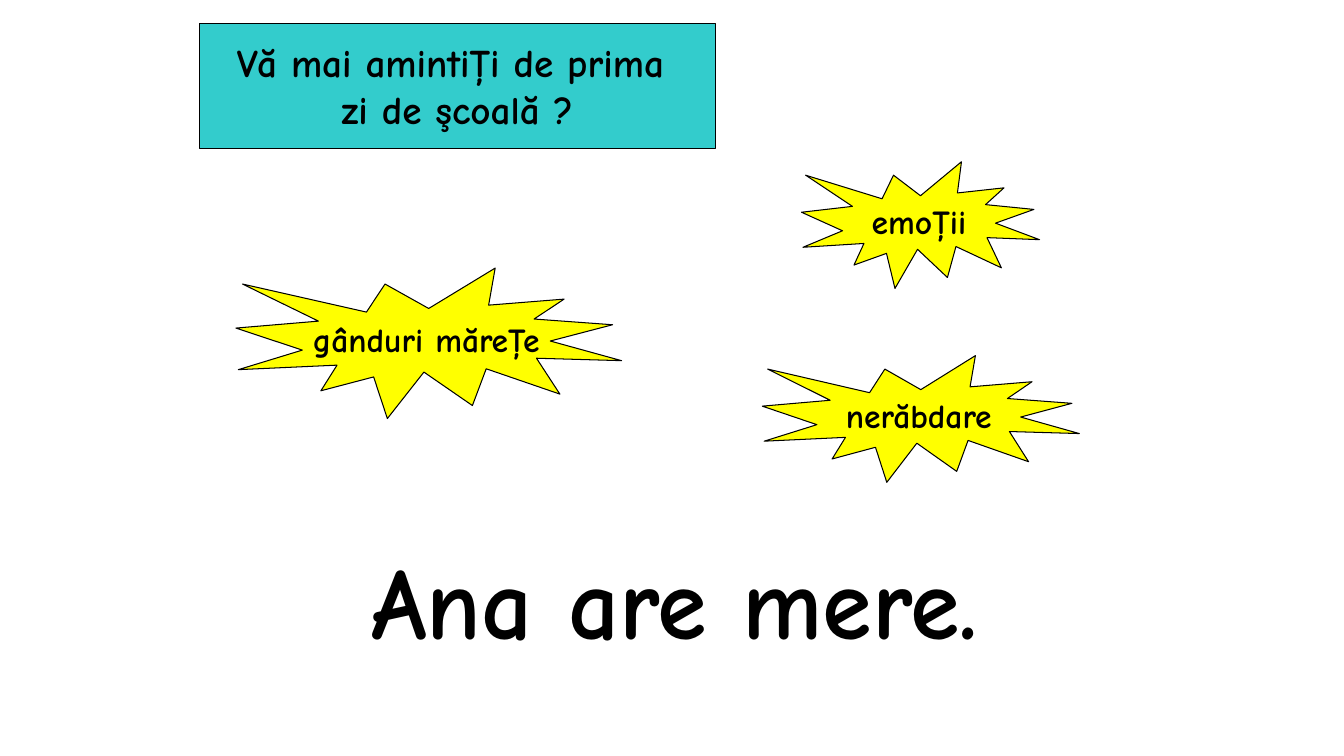
from pptx import Presentation
from pptx.dml.color import RGBColor
from pptx.enum.shapes import MSO_SHAPE
from pptx.enum.text import MSO_ANCHOR, PP_ALIGN
from pptx.util import Pt

FONT = "Comic Neue"
BLACK, WHITE, TEAL, YELLOW = "000000", "FFFFFF", "33CCCC", "FFFF00"


def color(hex_string):
    return RGBColor.from_string(hex_string)


def write_text(shape, text, size, text_color=BLACK, bold=True):
    """Write one centred paragraph per line of text."""
    frame = shape.text_frame
    frame.word_wrap = False
    frame.vertical_anchor = MSO_ANCHOR.MIDDLE
    frame.text = text
    for paragraph in frame.paragraphs:
        paragraph.alignment = PP_ALIGN.CENTER
        for run in paragraph.runs:
            run.font.name = FONT
            run.font.size = Pt(size)
            run.font.bold = bold
            run.font.color.rgb = color(text_color)


def add_panel(slide, box, text, size, fill, kind=MSO_SHAPE.RECTANGLE, outline=BLACK):
    """Add a filled shape with text; box is left, top, width, height in points."""
    shape = slide.shapes.add_shape(kind, *(Pt(length) for length in box))
    shape.shadow.inherit = False
    shape.fill.solid()
    shape.fill.fore_color.rgb = color(fill)
    if outline:
        shape.line.color.rgb = color(outline)
        shape.line.width = Pt(0.75)
    else:
        shape.line.fill.background()
    write_text(shape, text, size)


def add_question(slide, box):
    add_panel(slide, box, "Vă mai amintiţi de prima \nzi de şcoală ?", 28, TEAL)


def add_memory(slide, box, text):
    add_panel(slide, box, text, 24, YELLOW, kind=MSO_SHAPE.EXPLOSION1)


def add_first_sentence(slide, box):
    add_panel(slide, box, "Ana are mere.", 72, WHITE, outline=None)


def main():
    presentation = Presentation()
    presentation.slide_width = Pt(960)
    presentation.slide_height = Pt(540)
    slide = presentation.slides.add_slide(presentation.slide_layouts[6])
    slide.background.fill.solid()
    slide.background.fill.fore_color.rgb = color(WHITE)

    add_question(slide, (142.5, 16.5, 368.5, 89.5))
    memories = {
        "gânduri măreţe": (168.5, 191.5, 275.5, 107.5),
        "emoţii": (572.5, 115.5, 170, 90.5),
        "nerăbdare": (544.5, 254, 226.5, 90.5),
    }
    for text, box in memories.items():
        add_memory(slide, box, text)
    add_first_sentence(slide, (306, 349, 351.5, 158.5))

    presentation.save("out.pptx")


if __name__ == "__main__":
    main()
